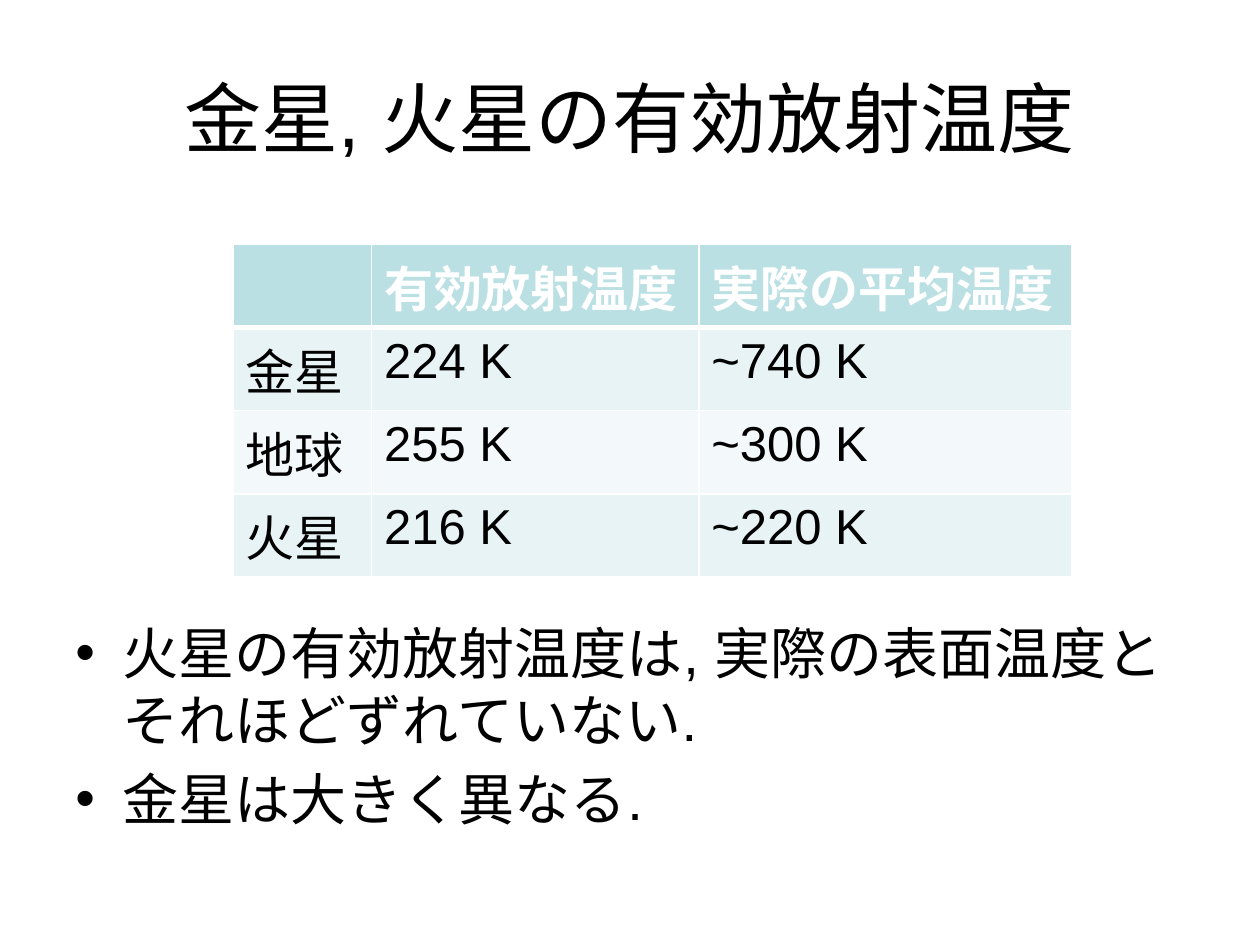
import dataclasses

import pptx
import pptx.dml.color
import pptx.enum.text
import pptx.oxml
import pptx.oxml.ns
import pptx.util


@dataclasses.dataclass(frozen=True)
class Theme:
    font: str = "Arial"
    ink: str = "000000"
    paper: str = "FFFFFF"
    header: str = "BBE0E3"
    bands: tuple = ("E7F3F4", "F3F9FA")
    title_size: int = 44
    body_size: int = 32
    table_size: int = 28
    rule: int = 1
    header_rule: int = 3


@dataclasses.dataclass(frozen=True)
class Box:
    left: float
    top: float
    width: float
    height: float

    def emu(self):
        return [pptx.util.Inches(v) for v in dataclasses.astuple(self)]


THEME = Theme()
WIDTH, HEIGHT = 10, 7.5
MARGIN = 0.05 * WIDTH
CONTENT = WIDTH - 2 * MARGIN
TITLE_BOX = Box(MARGIN, 0.04 * HEIGHT, CONTENT, HEIGHT / 6)
TABLE_BOX = Box(1.85, 1.94, 6.66, 2.64)
BULLET_BOX = Box(MARGIN, 4.86, CONTENT, 1.84)

TITLE = "金星, 火星の有効放射温度"
COLUMN_SHARES = (0.165, 0.39, 0.445)
ROWS = (
    ("", "有効放射温度", "実際の平均温度"),
    ("金星", "224 K", "~740 K"),
    ("地球", "255 K", "~300 K"),
    ("火星", "216 K", "~220 K"),
)
BULLETS = (
    "火星の有効放射温度は, 実際の表面温度とそれほどずれていない.",
    "金星は大きく異なる.",
)


def rgb(color):
    return pptx.dml.color.RGBColor.from_string(color)


def style(p, size, color=THEME.ink, bold=False):
    p.font.name = THEME.font
    p.font.size = pptx.util.Pt(size)
    p.font.bold = bold
    p.font.color.rgb = rgb(color)


def add_title(s, box, text):
    sp = s.shapes.title
    sp.left, sp.top, sp.width, sp.height = box.emu()
    tf = sp.text_frame
    tf.text = text
    tf.vertical_anchor = pptx.enum.text.MSO_ANCHOR.MIDDLE
    p = tf.paragraphs[0]
    p.alignment = pptx.enum.text.PP_ALIGN.CENTER
    style(p, THEME.title_size)


def set_borders(cell, **widths):
    tcPr = cell._tc.get_or_add_tcPr()
    for side in "LRTB":
        width = pptx.util.Pt(widths.get(side, THEME.rule))
        tcPr.append(pptx.oxml.parse_xml(
            f'<a:ln{side} {pptx.oxml.ns.nsdecls("a")} w="{width}"><a:solidFill>'
            f'<a:srgbClr val="{THEME.paper}"/></a:solidFill></a:ln{side}>'))


def add_temperature_table(s, box, rows, shares):
    table = s.shapes.add_table(len(rows), len(shares), *box.emu()).table
    for column, share in zip(table.columns, shares):
        column.width = pptx.util.Inches(box.width * share)
    for i, row in enumerate(rows):
        table.rows[i].height = pptx.util.Inches(box.height / len(rows))
        is_header = i == 0
        fill = THEME.header if is_header else THEME.bands[(i - 1) % 2]
        color = THEME.paper if is_header else THEME.ink
        heavy = {0: {"B": THEME.header_rule}, 1: {"T": THEME.header_rule}}.get(i, {})
        for j, text in enumerate(row):
            cell = table.cell(i, j)
            cell.text = text
            style(cell.text_frame.paragraphs[0], THEME.table_size, color, is_header)
            set_borders(cell, **heavy)
            cell.fill.solid()
            cell.fill.fore_color.rgb = rgb(fill)


def add_bullets(s, box, items):
    tf = s.shapes.add_textbox(*box.emu()).text_frame
    tf.word_wrap = True
    indent = pptx.util.Inches(3 / 8)
    ns = pptx.oxml.ns.nsdecls("a")
    for i, text in enumerate(items):
        p = tf.paragraphs[0] if i == 0 else tf.add_paragraph()
        p.text = text
        p.space_before = pptx.util.Pt(0.2 * THEME.body_size)
        style(p, THEME.body_size)
        pPr = p._p.get_or_add_pPr()
        pPr.set("marL", str(indent))
        pPr.set("indent", str(-indent))
        for xml in (f'<a:buFont {ns} typeface="{THEME.font}"/>',
                    f'<a:buChar {ns} char="•"/>'):
            pPr.insert_element_before(
                pptx.oxml.parse_xml(xml), "a:tabLst", "a:defRPr", "a:extLst")


def main():
    prs = pptx.Presentation()
    prs.slide_width = pptx.util.Inches(WIDTH)
    prs.slide_height = pptx.util.Inches(HEIGHT)
    s = prs.slides.add_slide(prs.slide_layouts.get_by_name("Title Only"))
    s.background.fill.solid()
    s.background.fill.fore_color.rgb = rgb(THEME.paper)
    add_title(s, TITLE_BOX, TITLE)
    add_bullets(s, BULLET_BOX, BULLETS)
    add_temperature_table(s, TABLE_BOX, ROWS, COLUMN_SHARES)
    prs.save("out.pptx")


if __name__ == "__main__":
    main()
